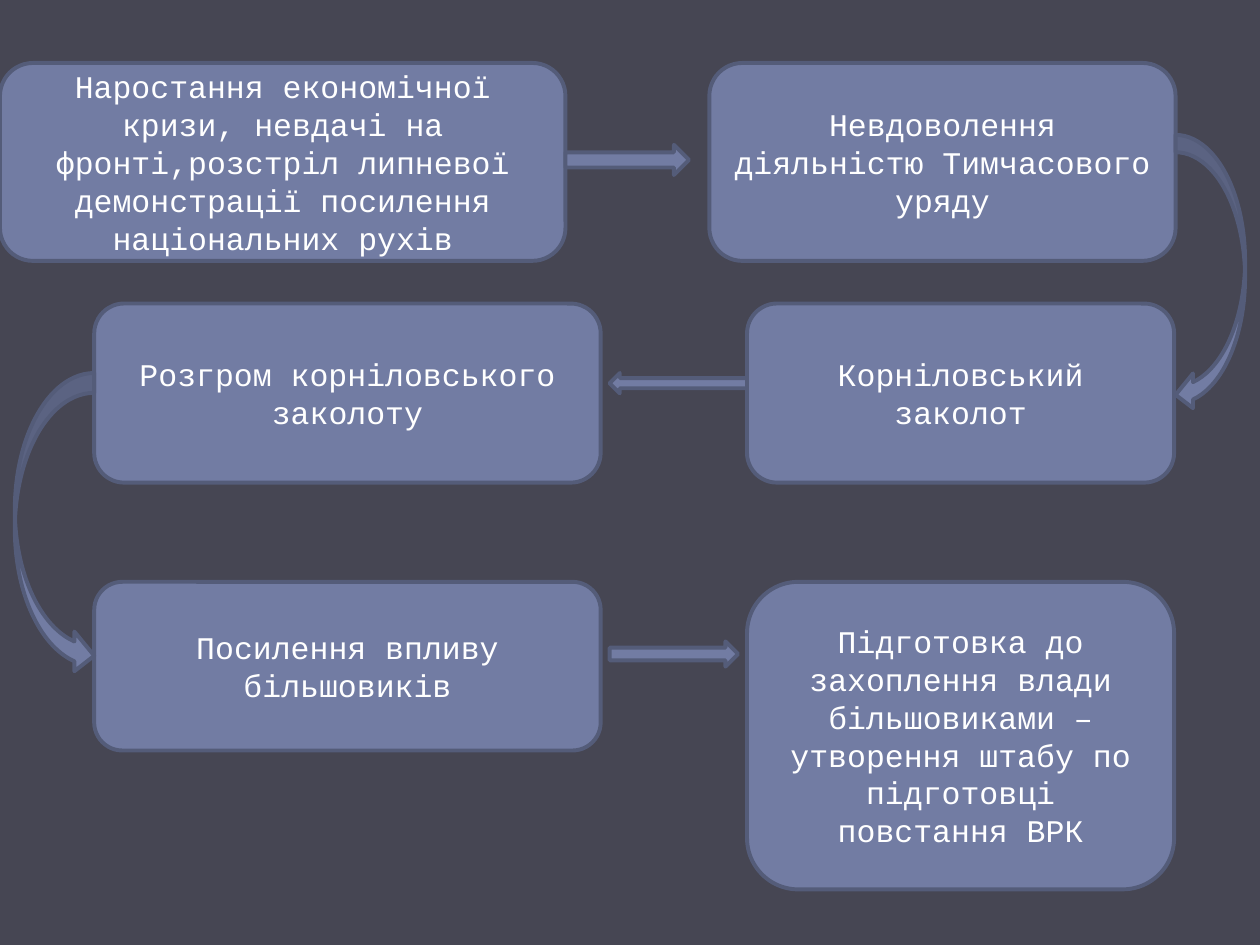
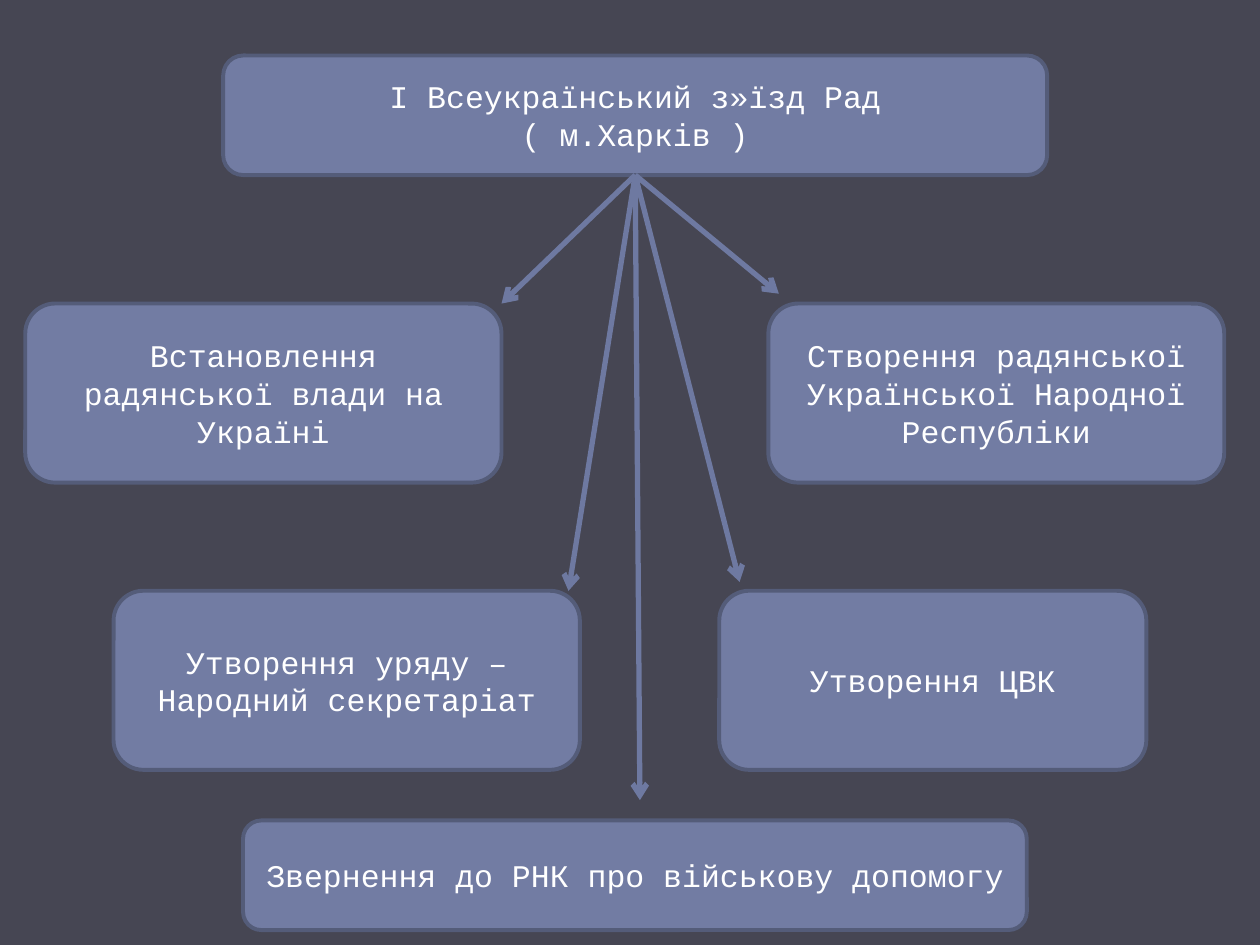
from lxml.etree import SubElement
from pptx import Presentation
from pptx.dml.color import RGBColor
from pptx.enum.shapes import MSO_CONNECTOR as LINK, MSO_SHAPE as SHAPE
from pptx.enum.text import MSO_ANCHOR as ANCHOR, PP_ALIGN as ALIGN
from pptx.oxml.ns import qn
from pptx.util import Cm, Pt

# Shared look
COLORS = {"back": "464653", "fill": "727CA3", "edge": "545C79",
          "link": "6E79A1", "text": "FFFFFF"}
FONT, SIZE = "Courier New", 18

# Rows are (top, height) and columns (left, width), in cm
TOP, MID, LOW = (1.27, 3.99), (6.12, 3.61), (11.91, 3.61)
LEFT, RIGHT = (1.9, 10.21), (15.06, 8.61)

# Slide 1: the chain of events; box is column, row, text
EVENTS = [
    ((0, 11.4), TOP, "Наростання економічної кризи, невдачі на фронті,розстріл "
                     "липневої демонстрації посилення національних рухів"),
    ((14.3, 9.4), TOP, "Невдоволення діяльністю Тимчасового уряду"),
    (RIGHT, MID, "Корніловський заколот"),
    (LEFT, MID, "Розгром корніловського заколоту"),
    (LEFT, (11.73, 3.4), "Посилення впливу більшовиків"),
    (RIGHT, (11.73, 6.2), "Підготовка до захоплення влади більшовиками – "
                          "утворення штабу по підготовці повстання ВРК"),
]
ARROWS = [
    (SHAPE.RIGHT_ARROW, (11.4, 2.49), (2.92, 0.61)),
    (SHAPE.CURVED_LEFT_ARROW, (23.7, 1.4), (2.72, 5.59)),
    (SHAPE.LEFT_ARROW, (12.29, 2.77), (7.52, 0.41)),
    (SHAPE.CURVED_RIGHT_ARROW, (0.3, 1.6), (7.52, 6.1)),
    (SHAPE.RIGHT_ARROW, (12.29, 2.59), (12.93, 0.51)),
]

# Slide 2: the congress and its decisions
HEAD = ((4.5, 16.61), (1.12, 2.41), "І Всеукраїнський з»їзд Рад\n( м.Харків )")
ACTS = [
    ((0.51, 9.6), MID, "Встановлення радянської влади на Україні"),
    ((15.49, 9.19), MID, "Створення радянської Української Народної Республіки"),
    ((2.29, 9.4), LOW, "Утворення уряду – Народний секретаріат"),
    ((14.5, 8.61), LOW, "Утворення ЦВК"),
    ((4.9, 15.8), (16.54, 2.21), "Звернення до РНК про військову допомогу"),
]
TIPS = [(10.11, 6.12), (15.7, 5.92), (11.46, 11.91), (14.91, 11.73), (12.9, 16.13)]


def paint(part, name):
    part.solid()
    part.fore_color.rgb = RGBColor.from_string(COLORS[name])


def add_form(slide, kind, col, row):
    (x, w), (y, h) = col, row
    form = slide.shapes.add_shape(kind, Cm(x), Cm(y), Cm(w), Cm(h))
    form.shadow.inherit = False
    paint(form.fill, "fill")
    paint(form.line.fill, "edge")
    form.line.width = Pt(2.25)
    return form


def add_box(slide, col, row, text):
    frame = add_form(slide, SHAPE.ROUNDED_RECTANGLE, col, row).text_frame
    frame.word_wrap = True
    frame.vertical_anchor = ANCHOR.MIDDLE
    for i, words in enumerate(text.split("\n")):
        para = frame.add_paragraph() if i else frame.paragraphs[0]
        para.alignment = ALIGN.CENTER
        run = para.add_run()
        run.text = words
        run.font.name, run.font.size = FONT, Pt(SIZE)
        paint(run.font.fill, "text")


def add_link(slide, start, end):
    link = slide.shapes.add_connector(LINK.STRAIGHT, *map(Cm, start + end))
    paint(link.line.fill, "link")
    link.line.width = Pt(3)
    props = link.element.spPr
    SubElement(props.find(qn("a:ln")), qn("a:tailEnd"), type="arrow")
    SubElement(props, qn("a:effectLst"))


def main():
    deck = Presentation()
    deck.slide_width, deck.slide_height = Cm(25.4), Cm(19.05)
    paint(deck.slide_master.background.fill, "back")
    blank = deck.slide_layouts[6]

    # Chain
    chain = deck.slides.add_slide(blank)
    for event in EVENTS:
        add_box(chain, *event)
    for arrow in ARROWS:
        add_form(chain, *arrow)

    # Fan of links from the foot of the head box
    fan = deck.slides.add_slide(blank)
    for act in [HEAD] + ACTS:
        add_box(fan, *act)
    (x, w), (y, h), _ = HEAD
    for tip in TIPS:
        add_link(fan, (x + w / 2, y + h), tip)

    deck.save("out.pptx")


if __name__ == "__main__":
    main()
